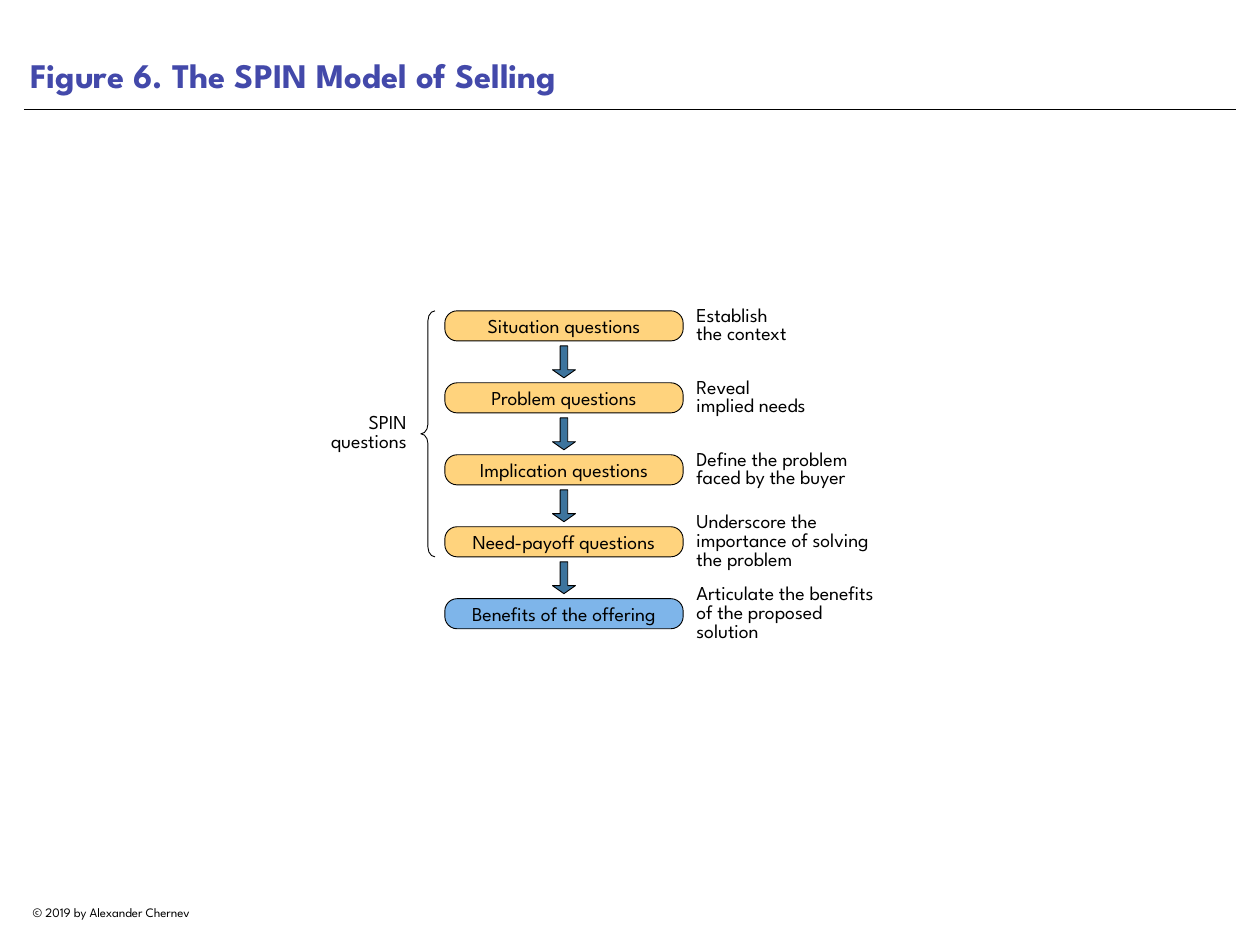
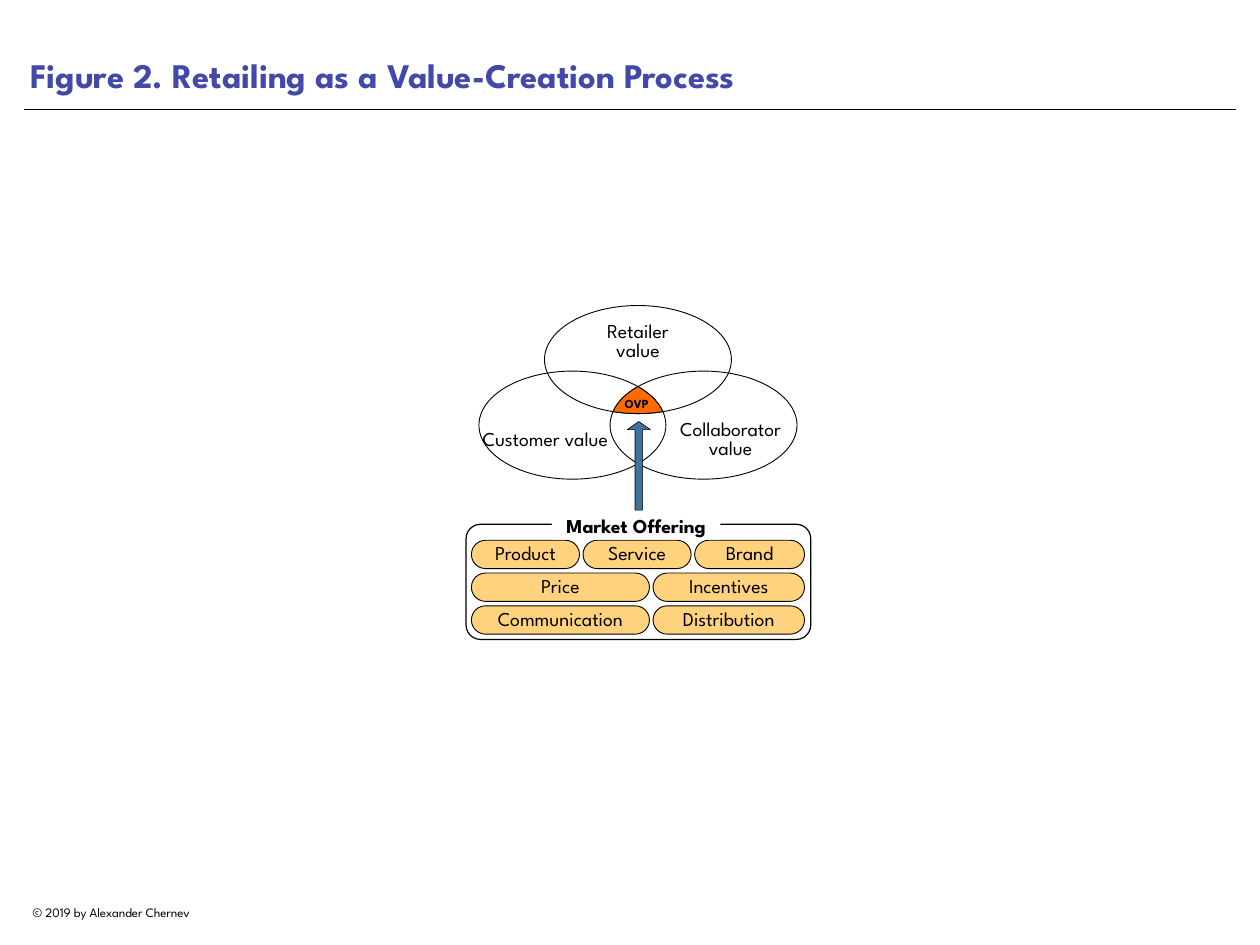
from math import sqrt

from lxml.etree import SubElement
from pptx import Presentation
from pptx.dml.color import RGBColor
from pptx.enum.shapes import MSO_CONNECTOR, MSO_SHAPE
from pptx.enum.text import MSO_ANCHOR, PP_ALIGN
from pptx.oxml.ns import qn
from pptx.util import Inches, Pt

WIDTH, HEIGHT = 14.22, 10.67
FONT = "League Spartan"
COLORS = {"title": "4349AA", "ink": "000000", "step": "FFD37D", "result": "7EB5EA",
          "arrow": "3D749D", "core": "FF6B00", "paper": "FFFFFF"}
FOOTER = "© 2019 by Alexander Chernev"

# Content: the selling steps, each with its purpose and fill
SPIN_TITLE = "Figure 6. The SPIN Model of Selling"
SPIN_LABEL = "SPIN\vquestions"
STEPS = [
    ("Situation questions", "Establish\vthe context", "step"),
    ("Problem questions", "Reveal\vimplied needs", "step"),
    ("Implication questions", "Define the problem faced by the buyer", "step"),
    ("Need-payoff questions", "Underscore the importance of solving the problem", "step"),
    ("Benefits of the offering", "Articulate the benefits of the proposed solution", "result"),
]

# Content: value circles (label, label box, ellipse centre) and offering rows (text, width)
VALUE_TITLE = "Figure 2. Retailing as a Value-Creation Process"
VALUES = {
    "retailer": ("Retailer\vvalue", (6.33, 3.57, 1.74, 0.59), (7.2, 4.06)),
    "customer": ("Customer value", (5.43, 4.58, 1.45, 0.79), (6.46, 4.8)),
    "collaborator": ("Collaborator value", (7.57, 4.63, 1.35, 0.68), (7.94, 4.8)),
}
OFFERING_TITLE = "Market Offering"
OFFERING = [
    [("Product", 1.22), ("Service", 1.22), ("Brand", 1.24)],
    [("Price", 2.01), ("Incentives", 1.71)],
    [("Communication", 2.01), ("Distribution", 1.71)],
]


def color(name):
    return RGBColor.from_string(COLORS[name])


def write(shape, text, size=16, ink="ink", bold=False, align=PP_ALIGN.CENTER,
          anchor=MSO_ANCHOR.MIDDLE, insets=(0, 0, 0, 0), spacing=0.8):
    frame = shape.text_frame
    frame.word_wrap = True
    frame.vertical_anchor = anchor
    frame.margin_left, frame.margin_top, frame.margin_right, frame.margin_bottom = map(Inches, insets)
    paragraph = frame.paragraphs[0]
    paragraph.text = text
    paragraph.alignment = align
    paragraph.line_spacing = spacing
    for run in paragraph.runs:
        run.font.name, run.font.size, run.font.bold = FONT, Pt(size), bold
        run.font.color.rgb = color(ink)


def add_text(slide, box, text, **style):
    write(slide.shapes.add_textbox(*map(Inches, box)), text, **style)


def paint(shape, fill=None, line=0.75):
    shape.shadow.inherit = False
    if fill:
        shape.fill.solid()
        shape.fill.fore_color.rgb = color(fill)
    else:
        shape.fill.background()
    if line:
        shape.line.color.rgb = color("ink")
        shape.line.width = Pt(line)
    else:
        shape.line.fill.background()


def add_shape(slide, kind, box, fill=None, line=0.75, adjust=()):
    shape = slide.shapes.add_shape(kind, *map(Inches, box))
    paint(shape, fill, line)
    for index, value in enumerate(adjust):
        shape.adjustments[index] = value
    return shape


def add_pill(slide, box, text, fill, roundness):
    pill = add_shape(slide, MSO_SHAPE.ROUNDED_RECTANGLE, box, fill, adjust=[roundness])
    write(pill, text, anchor=MSO_ANCHOR.BOTTOM)


def add_arrow(slide, kind, center_x, center_y, length, line=0.75):
    width = 0.26
    box = (center_x - width / 2, center_y - length / 2, width, length)
    add_shape(slide, kind, box, "arrow", line, adjust=[0.33, 0.35])


def add_framed_slide(presentation, title):
    """Blank slide with the shared title, rule and footer."""
    slide = presentation.slides.add_slide(presentation.slide_layouts[6])
    margin, rule_y = 0.27, 1.24
    add_text(slide, (margin, 10.16, 2.34, 0.28), FOOTER, size=10.5, align=PP_ALIGN.LEFT,
             insets=(0.1, 0, 0, 0), spacing=1)
    rule = slide.shapes.add_connector(MSO_CONNECTOR.STRAIGHT, *map(
        Inches, (margin, rule_y, WIDTH - margin, rule_y)))
    rule.line.color.rgb = color("ink")
    rule.line.width = Pt(0.5)
    SubElement(rule.line._get_or_add_ln().getparent(), qn("a:effectLst"))
    add_text(slide, (margin, 0, WIDTH - 2 * margin, 1.15), title, size=28, ink="title",
             bold=True, align=PP_ALIGN.LEFT, anchor=MSO_ANCHOR.BOTTOM,
             insets=(0.07,) * 4, spacing=1)
    return slide


def build_spin(presentation):
    slide = add_framed_slide(presentation, SPIN_TITLE)
    left, width, height = 5.02, 2.69, 0.34
    first, last, note_height = 3.51, 6.76, 0.76
    pitch = (last - first) / (len(STEPS) - 1)

    # Steps, their notes and the arrows between them
    for index, (step, note, fill) in enumerate(STEPS):
        top = first + index * pitch
        add_pill(slide, (left, top, width, height), step, fill, 0.41)
        add_text(slide, (7.8, top + (height - note_height) / 2, 2.13, note_height), note,
                 align=PP_ALIGN.LEFT, insets=(0.06,) * 4)
        if index:
            add_arrow(slide, MSO_SHAPE.DOWN_ARROW, left + width / 2,
                      top - (pitch - height) / 2, 0.36)

    # Brace around the question steps
    question_count = sum(fill == "step" for _, _, fill in STEPS)
    brace_height = (question_count - 1) * pitch + height
    add_shape(slide, MSO_SHAPE.LEFT_BRACE, (4.75, first, 0.16, brace_height), adjust=[0.69, 0.5])
    add_text(slide, (3.56, 4.59, 1.14, 0.61), SPIN_LABEL, align=PP_ALIGN.RIGHT,
             insets=(0.06, 0.06, 0.11, 0.06))


def build_value(presentation):
    slide = add_framed_slide(presentation, VALUE_TITLE)
    radius_x, radius_y = 1.055, 0.61

    # Overlapping values
    for label, label_box, (x, y) in VALUES.values():
        add_text(slide, label_box, label)
        add_shape(slide, MSO_SHAPE.OVAL,
                  (x - radius_x, y - radius_y, 2 * radius_x, 2 * radius_y))

    # Shared core: below both lower ellipses' tops, above the upper ellipse's bottom
    def edge(name, x, side):
        center_x, center_y = VALUES[name][2]
        return center_y + side * radius_y * sqrt(1 - ((x - center_x) / radius_x) ** 2)

    center, half, count = VALUES["retailer"][2][0], 0.28, 28
    columns = [center - half + 2 * half * index / count for index in range(count + 1)]
    upper = [(x, max(edge("customer", x, -1), edge("collaborator", x, -1))) for x in columns]
    lower = [(x, edge("retailer", x, 1)) for x in reversed(columns)]
    outline = [(Inches(x), Inches(y)) for x, y in upper + lower]
    builder = slide.shapes.build_freeform(*outline[0])
    builder.add_line_segments(outline[1:], close=True)
    paint(builder.convert_to_shape(), "core")
    add_text(slide, (7.05, 4.46, 0.46, 0.2), "OVP", size=10, bold=True,
             align=PP_ALIGN.LEFT, spacing=1)

    # Market offering: frame, rows of pills, heading over the frame's top edge
    add_shape(slide, MSO_SHAPE.ROUNDED_RECTANGLE, (5.26, 5.92, 3.89, 1.3), line=1, adjust=[0.125])
    for row, cells in enumerate(OFFERING):
        left = 5.32
        for text, width in cells:
            add_pill(slide, (left, 6.1 + row * 0.37, width, 0.32), text, "step", 0.5)
            left += width + 0.04
    heading = add_shape(slide, MSO_SHAPE.RECTANGLE, (6.23, 5.77, 1.9, 0.32), "paper", line=0)
    write(heading, OFFERING_TITLE, bold=True, spacing=1)
    add_arrow(slide, MSO_SHAPE.UP_ARROW, 7.21, 5.26, 1, line=0.5)


def main():
    presentation = Presentation()
    presentation.slide_width, presentation.slide_height = Inches(WIDTH), Inches(HEIGHT)
    build_spin(presentation)
    build_value(presentation)
    presentation.save("out.pptx")


if __name__ == "__main__":
    main()
